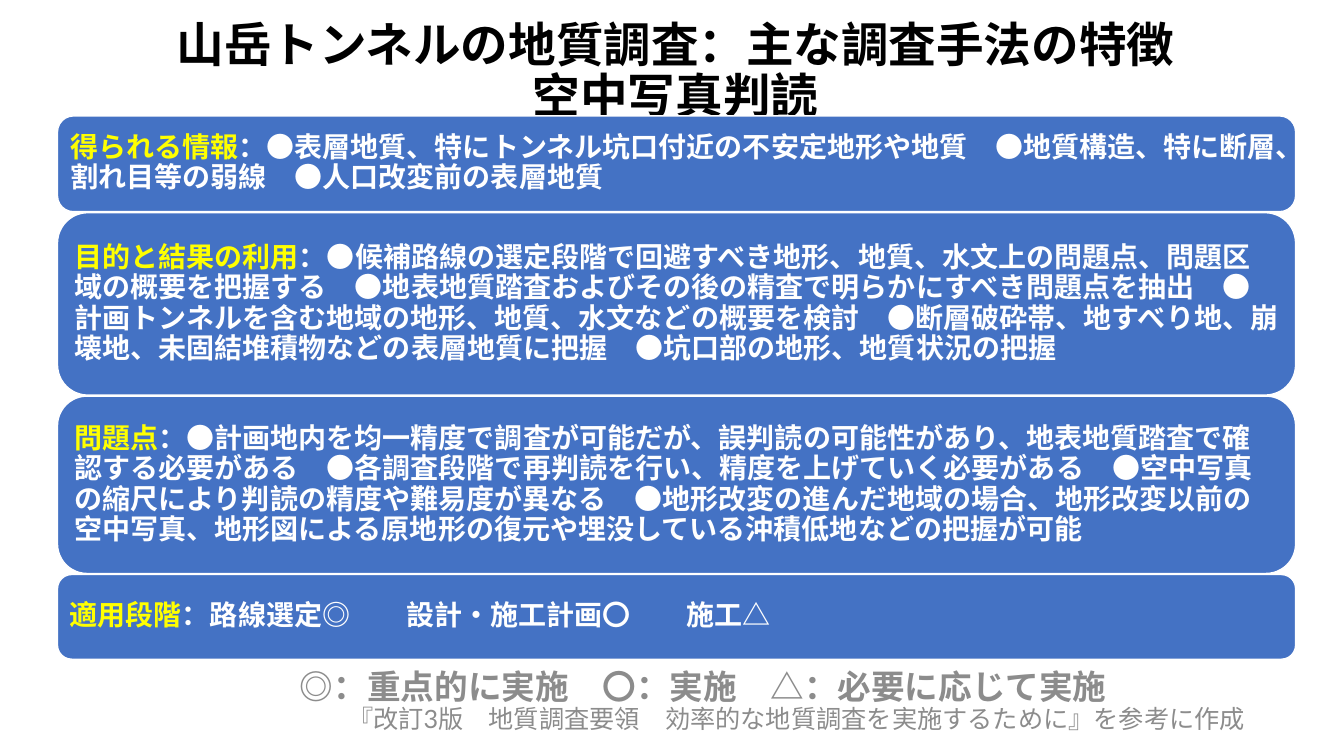
import pptx
import pptx.util
import pptx.dml.color
import pptx.enum.shapes
import pptx.enum.text
import lxml.etree
from pptx.oxml.ns import qn

Inches = pptx.util.Inches
ALIGN = pptx.enum.text.PP_ALIGN

# Content
TITLE = "山岳トンネルの地質調査：主な調査手法の特徴\n空中写真判読"
# (heading, details, height in inches)
PANELS = [
    ("得られる情報",
     "：●表層地質、特にトンネル坑口付近の不安定地形や地質　●地質構造、特に断層、割れ目等の弱線　"
     "●人口改変前の表層地質", 0.95),
    ("目的と結果の利用",
     "：●候補路線の選定段階で回避すべき地形、地質、水文上の問題点、問題区域の概要を把握する　"
     "●地表地質踏査およびその後の精査で明らかにすべき問題点を抽出　"
     "●計画トンネルを含む地域の地形、地質、水文などの概要を検討　"
     "●断層破砕帯、地すべり地、崩壊地、未固結堆積物などの表層地質に把握　"
     "●坑口部の地形、地質状況の把握", 1.81),
    ("問題点",
     "：●計画地内を均一精度で調査が可能だが、誤判読の可能性があり、地表地質踏査で確認する必要がある　"
     "●各調査段階で再判読を行い、精度を上げていく必要がある　"
     "●空中写真の縮尺により判読の精度や難易度が異なる　"
     "●地形改変の進んだ地域の場合、地形改変以前の空中写真、地形図による原地形の復元や"
     "埋没している沖積低地などの把握が可能", 1.76),
    ("適用段階", "：路線選定◎　　設計・施工計画〇　　施工△", 0.84),
]
LEGEND = "◎：重点的に実施　〇：実施　△：必要に応じて実施"
LATIN, JAPANESE = "Lato", "Noto Sans CJK JP"
CITATION = [
    ("『改訂", JAPANESE), ("3", LATIN), ("版　地質調査", JAPANESE), ("要領", LATIN),
    ("　効率的な地質調査を実施するために』を参考に作成", JAPANESE),
]
COLOURS = {"title": "000000", "panel": "4472C4", "edge": "FFFFFF",
           "heading": "FFFF00", "details": "FFFFFF", "note": "8C8C8C"}

PANEL_LEFT, PANEL_TOP, PANEL_WIDTH, PANEL_GAP = 0.57, 1.15, 12.28, 0.01


def colour(name):
    return pptx.dml.color.RGBColor.from_string(COLOURS[name])


def write(box, spans, size, bold=False, align=ALIGN.LEFT, spacing=1.0, margin=None):
    """Fill a shape with one paragraph of (text, colour, font) spans."""
    frame = box.text_frame
    frame.word_wrap = True
    frame.vertical_anchor = pptx.enum.text.MSO_ANCHOR.MIDDLE
    if margin is not None:
        frame.margin_left = frame.margin_right = Inches(margin)
        frame.margin_top = frame.margin_bottom = Inches(margin)
    para = frame.paragraphs[0]
    para.alignment = align
    para.line_spacing = spacing
    for text, tint, font in spans:
        for number, line in enumerate(text.split("\n")):
            if number:
                para.add_line_break()
            span = para.add_run()
            span.text = line
            span.font.name = font
            span.font.size = pptx.util.Pt(size)
            span.font.bold = bold
            span.font.color.rgb = colour(tint)
            # East Asian typeface
            east = lxml.etree.SubElement(span.font._element, qn("a:ea"))
            east.set("typeface", JAPANESE)


deck = pptx.Presentation()
deck.slide_width, deck.slide_height = Inches(13.33), Inches(7.5)
page = deck.slides.add_slide(deck.slide_layouts[6])


def text_box(left, top, width, height):
    return page.shapes.add_textbox(Inches(left), Inches(top), Inches(width), Inches(height))


# Title
write(text_box(0.26, 0.29, 12.88, 0.86), [(TITLE, "title", LATIN)],
      size=34, bold=True, align=ALIGN.CENTER, spacing=0.9)

# Stacked panels
top = PANEL_TOP
for heading, details, height in PANELS:
    panel = page.shapes.add_shape(
        pptx.enum.shapes.MSO_SHAPE.ROUNDED_RECTANGLE,
        Inches(PANEL_LEFT), Inches(top), Inches(PANEL_WIDTH), Inches(height))
    panel.shadow.inherit = False
    panel.fill.solid()
    panel.fill.fore_color.rgb = colour("panel")
    panel.line.color.rgb = colour("edge")
    panel.line.width = pptx.util.Pt(1)
    write(panel, [(heading, "heading", JAPANESE), (details, "details", JAPANESE)],
          size=20, bold=True, spacing=0.9, margin=0.08)
    top += height + PANEL_GAP

# Legend and citation
write(text_box(1.15, 6.54, 11.65, 0.53), [(LEGEND, "note", JAPANESE)],
      size=24, bold=True, align=ALIGN.CENTER)
write(text_box(3.16, 6.9, 9.48, 0.45), [(text, "note", font) for text, font in CITATION],
      size=18, align=ALIGN.CENTER)

deck.save("out.pptx")
